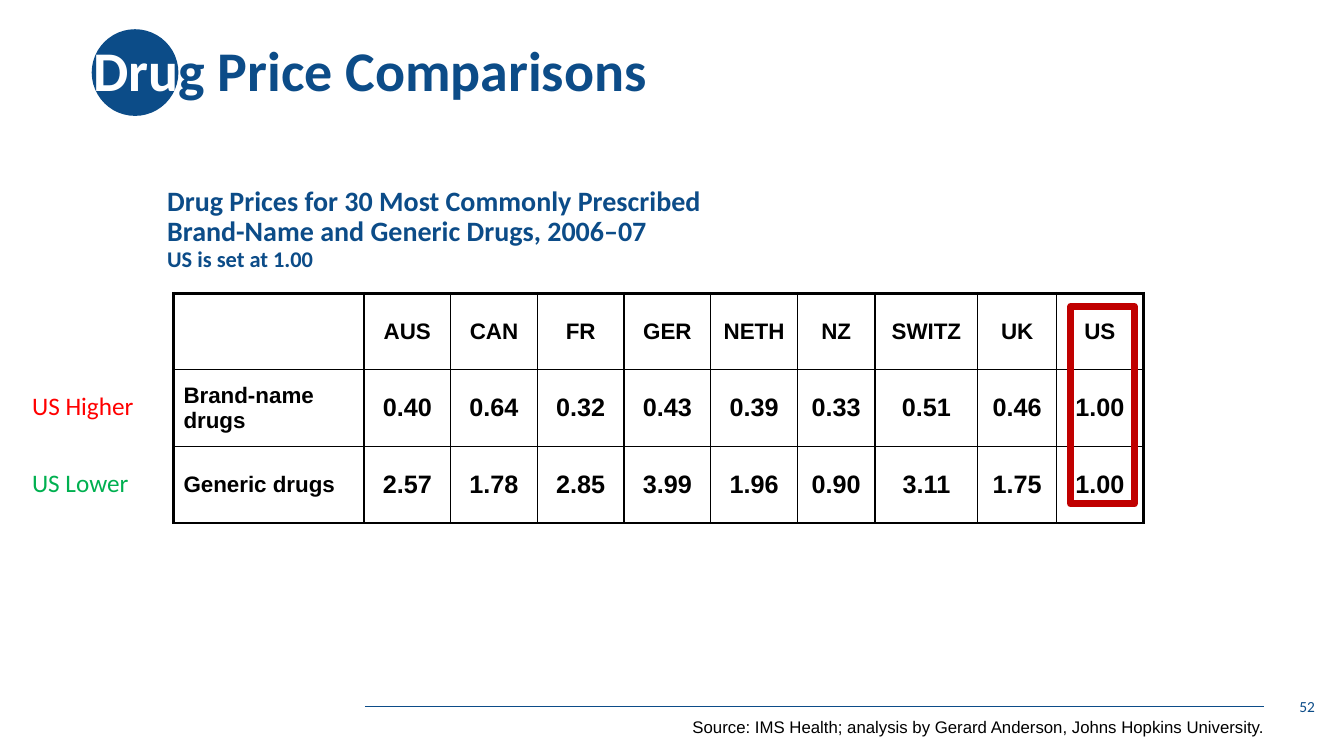
import dataclasses
import typing

import lxml.etree
import pptx
import pptx.dml.color
import pptx.enum.shapes
import pptx.enum.text
import pptx.oxml.ns
import pptx.util

SCALE = 9144  # EMU per px, at 100 px to the inch
ANCHOR = pptx.enum.text.MSO_ANCHOR
ALIGN = pptx.enum.text.PP_ALIGN
SHAPE = pptx.enum.shapes.MSO_SHAPE


@dataclasses.dataclass(frozen=True)
class Theme:
    navy: str = "0C4C88"
    white: str = "FFFFFF"
    black: str = "000000"
    frame: str = "C00000"
    red: str = "FF0000"
    green: str = "00B050"
    main: str = "Calibri"
    plain: str = "Arial"
    title: int = 40
    head: int = 20
    large: int = 18
    base: int = 16
    source: int = 12
    page: int = 11
    thin: float = 1
    thick: float = 2.25


THEME = Theme()


class Box(typing.NamedTuple):
    left: int
    top: int
    width: int
    height: int


class Span(typing.NamedTuple):
    text: str
    size: int
    color: str
    bold: bool = False
    font: str = THEME.main
    fresh: bool = False  # starts on a new line


class Label(typing.NamedTuple):
    box: Box
    spans: tuple[Span, ...]
    align: ALIGN = ALIGN.LEFT
    anchor: ANCHOR = ANCHOR.TOP
    space: float = 1.0
    wrap: bool = True
    grow: bool = False


class Mark(typing.NamedTuple):
    kind: SHAPE
    box: Box
    fill: str | None = None
    line: str | None = None
    width: float = 0


def px(size: int) -> pptx.util.Emu:
    return pptx.util.Emu(size * SCALE)


def rgb(code: str) -> pptx.dml.color.RGBColor:
    return pptx.dml.color.RGBColor.from_string(code)


def style(run, span: Span) -> None:
    run.font.name = span.font
    run.font.size = pptx.util.Pt(span.size)
    run.font.bold = span.bold
    run.font.color.rgb = rgb(span.color)


def add_label(slide, label: Label) -> None:
    frame = slide.shapes.add_textbox(*map(px, label.box)).text_frame
    frame.word_wrap = label.wrap
    frame.vertical_anchor = label.anchor
    if label.grow:
        frame.auto_size = pptx.enum.text.MSO_AUTO_SIZE.SHAPE_TO_FIT_TEXT
    para = frame.paragraphs[0]
    para.alignment = label.align
    para.line_spacing = label.space
    for span in label.spans:
        if span.fresh:
            para.add_line_break()
        run = para.add_run()
        run.text = span.text
        style(run, span)


def add_mark(slide, mark: Mark) -> None:
    shape = slide.shapes.add_shape(mark.kind, *map(px, mark.box))
    shape.shadow.inherit = False
    if mark.fill:
        shape.fill.solid()
        shape.fill.fore_color.rgb = rgb(mark.fill)
    else:
        shape.fill.background()
    if mark.line:
        shape.line.color.rgb = rgb(mark.line)
        shape.line.width = pptx.util.Pt(mark.width)
    else:
        shape.line.fill.background()


def add_rule(slide, left: int, right: int, top: int) -> None:
    kind = pptx.enum.shapes.MSO_CONNECTOR.STRAIGHT
    rule = slide.shapes.add_connector(kind, px(left), px(top), px(right), px(top))
    rule.line.color.rgb = rgb(THEME.navy)
    rule.line.width = pptx.util.Pt(0.5)
    qn = pptx.oxml.ns.qn
    lxml.etree.SubElement(rule._element.find(qn("p:spPr")), qn("a:effectLst"))


def add_edge(cell, side: str, width: float) -> None:
    qn = pptx.oxml.ns.qn
    props = cell._tc.get_or_add_tcPr()
    edge = lxml.etree.SubElement(props, qn(f"a:ln{side}"), w=str(pptx.util.Pt(width)))
    fill = lxml.etree.SubElement(edge, qn("a:solidFill"))
    lxml.etree.SubElement(fill, qn("a:srgbClr"), val=THEME.black)


def add_grid(slide, box: Box, widths: list[int], rows: list[list[str]]) -> None:
    grid = slide.shapes.add_table(len(rows), len(widths), *map(px, box)).table
    grid.first_row = grid.horz_banding = False
    for col, width in zip(grid.columns, widths):
        col.width = px(width)
    last_row, last_col = len(rows) - 1, len(widths) - 1
    for r, row in enumerate(rows):
        for c, text in enumerate(row):
            cell = grid.cell(r, c)
            outer = {"L": c == 0, "R": c == last_col, "T": r == 0, "B": r == last_row}
            for side, thick in outer.items():
                add_edge(cell, side, THEME.thick if thick else THEME.thin)
            cell.fill.background()
            cell.vertical_anchor = ANCHOR.MIDDLE
            cell.text_frame.text = text
            para = cell.text_frame.paragraphs[0]
            para.alignment = ALIGN.CENTER if c else ALIGN.LEFT
            size = THEME.large if r and c else THEME.base
            for run in para.runs:
                style(run, Span(text, size, THEME.black, True, THEME.plain))


WIDTHS = [189, 86, 86, 86, 86, 86, 77, 102, 78, 86]
PRICES = [
    ["", "AUS", "CAN", "FR", "GER", "NETH", "NZ", "SWITZ", "UK", "US"],
    ["Brand-name drugs", "0.40", "0.64", "0.32", "0.43", "0.39", "0.33", "0.51", "0.46", "1.00"],
    ["Generic drugs", "2.57", "1.78", "2.85", "3.99", "1.96", "0.90", "3.11", "1.75", "1.00"],
]

DISC = Mark(SHAPE.OVAL, Box(91, 29, 86, 86), fill=THEME.navy)
FRAME = Mark(SHAPE.RECTANGLE, Box(1062, 304, 63, 196), line=THEME.frame, width=5)

LABELS = [
    Label(Box(83, 0, 1150, 145), (
        Span("Dru", THEME.title, THEME.white, True),
        Span("g Price Comparisons", THEME.title, THEME.navy, True),
    ), anchor=ANCHOR.MIDDLE, space=0.9),
    Label(Box(1014, 681, 300, 40), (Span("52", THEME.page, THEME.navy),),
          align=ALIGN.RIGHT, anchor=ANCHOR.MIDDLE),
    Label(Box(156, 181, 778, 110), (
        Span("Drug Prices for 30 Most Commonly Prescribed", THEME.head, THEME.navy, True),
        Span("Brand-Name and Generic Drugs, 2006–07", THEME.head, THEME.navy, True, fresh=True),
        Span("US is set at 1.00", THEME.base, THEME.navy, True, fresh=True),
    ), space=0.9),
    Label(Box(677, 706, 637, 30), (
        Span("Source: IMS Health; analysis by Gerard Anderson, Johns Hopkins University.",
             THEME.source, THEME.black, font=THEME.plain),
    ), grow=True),
]
NOTES = [
    Label(Box(22, 382, 122, 40), (Span("US Higher", THEME.large, THEME.red),),
          wrap=False, grow=True),
    Label(Box(22, 459, 117, 40), (Span("US Lower", THEME.large, THEME.green),),
          wrap=False, grow=True),
]


def main() -> None:
    deck = pptx.Presentation()
    deck.slide_width, deck.slide_height = px(1333), px(750)
    slide = deck.slides.add_slide(deck.slide_layouts[6])

    # Footer rule and title disc
    add_rule(slide, 362, 1254, 701)
    add_mark(slide, DISC)

    # Title, page number, heading and source
    for label in LABELS:
        add_label(slide, label)

    # Price table with the US column framed
    add_grid(slide, Box(172, 291, sum(WIDTHS), 228), WIDTHS, PRICES)
    add_mark(slide, FRAME)

    # Row notes
    for note in NOTES:
        add_label(slide, note)

    deck.save("out.pptx")


if __name__ == "__main__":
    main()
